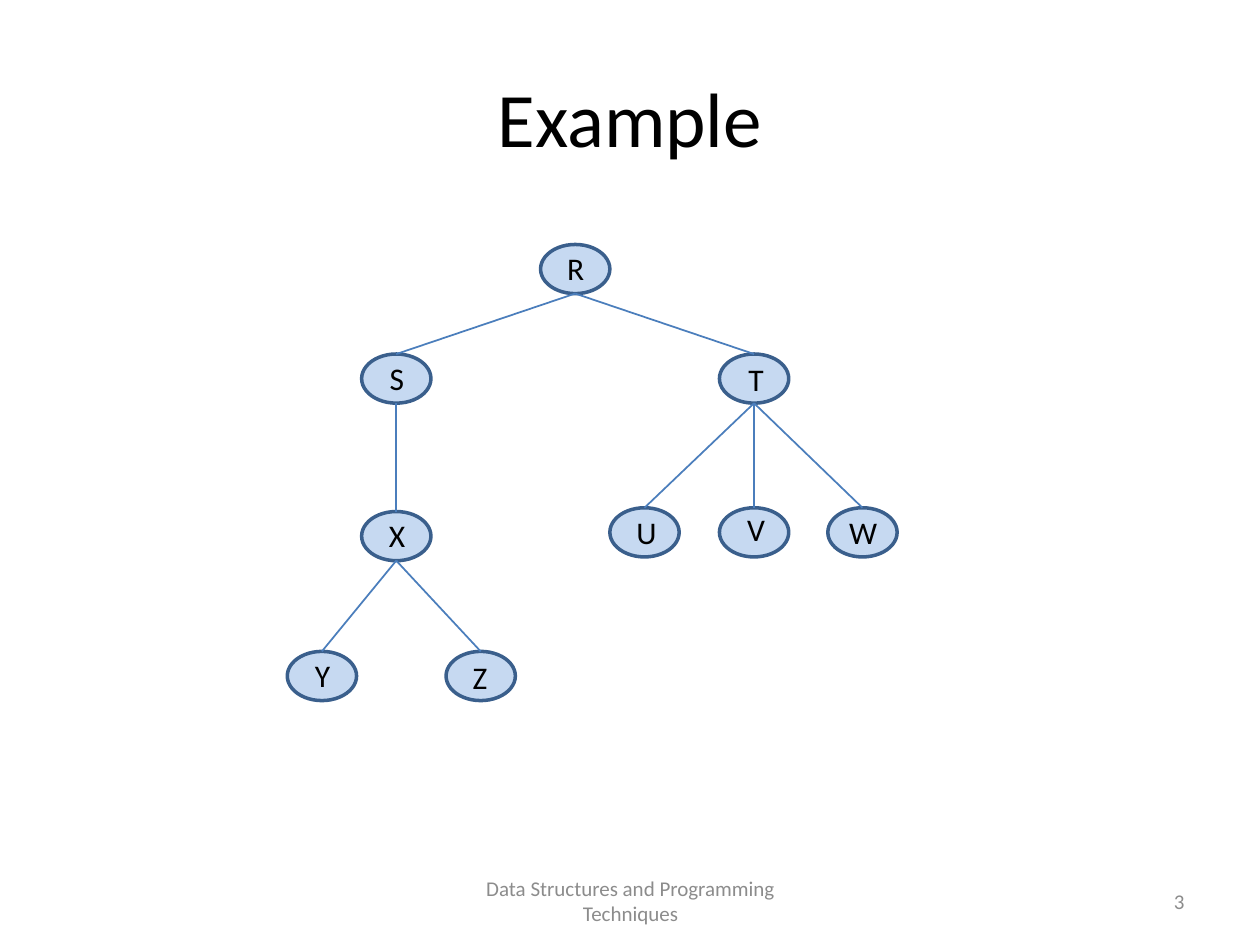
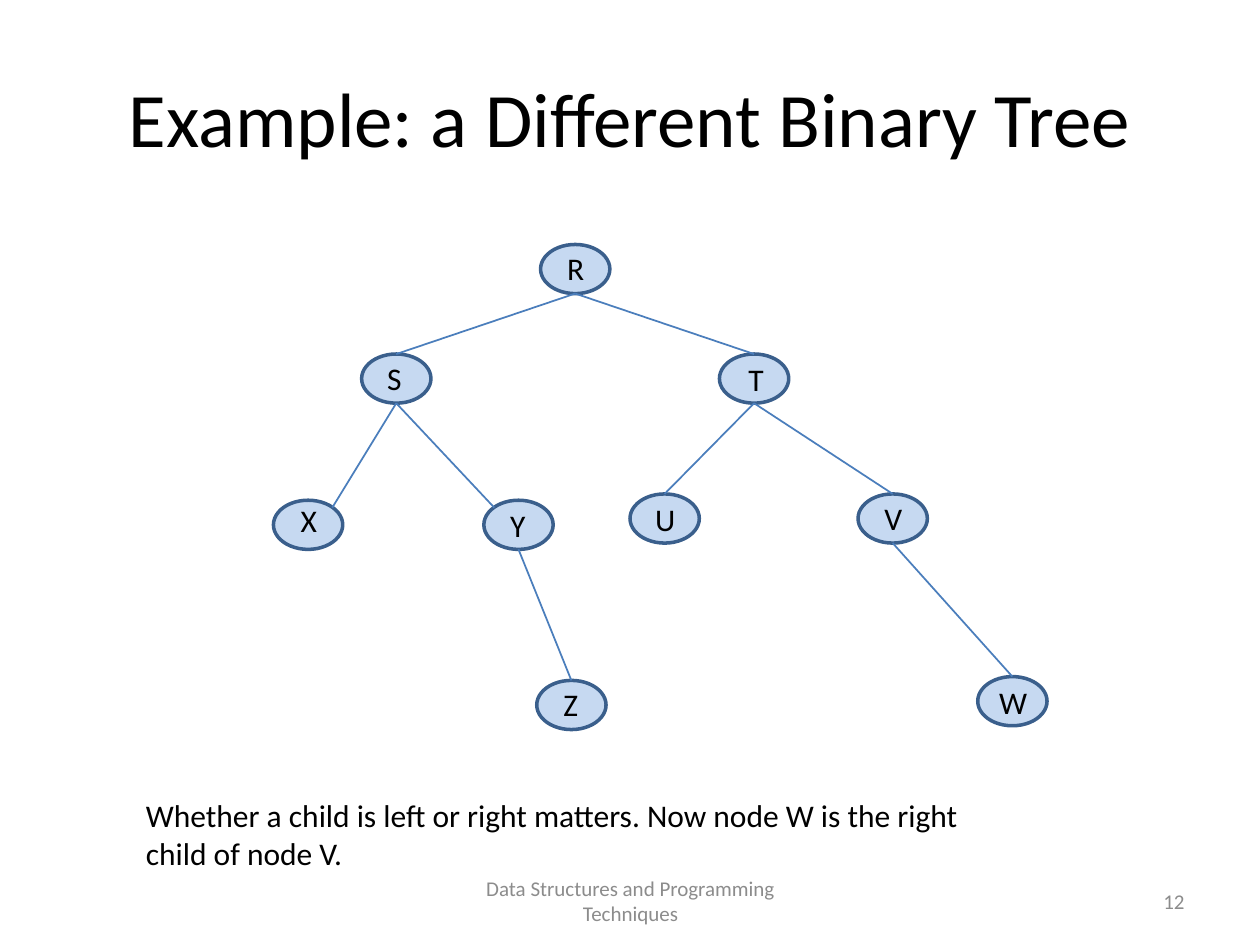
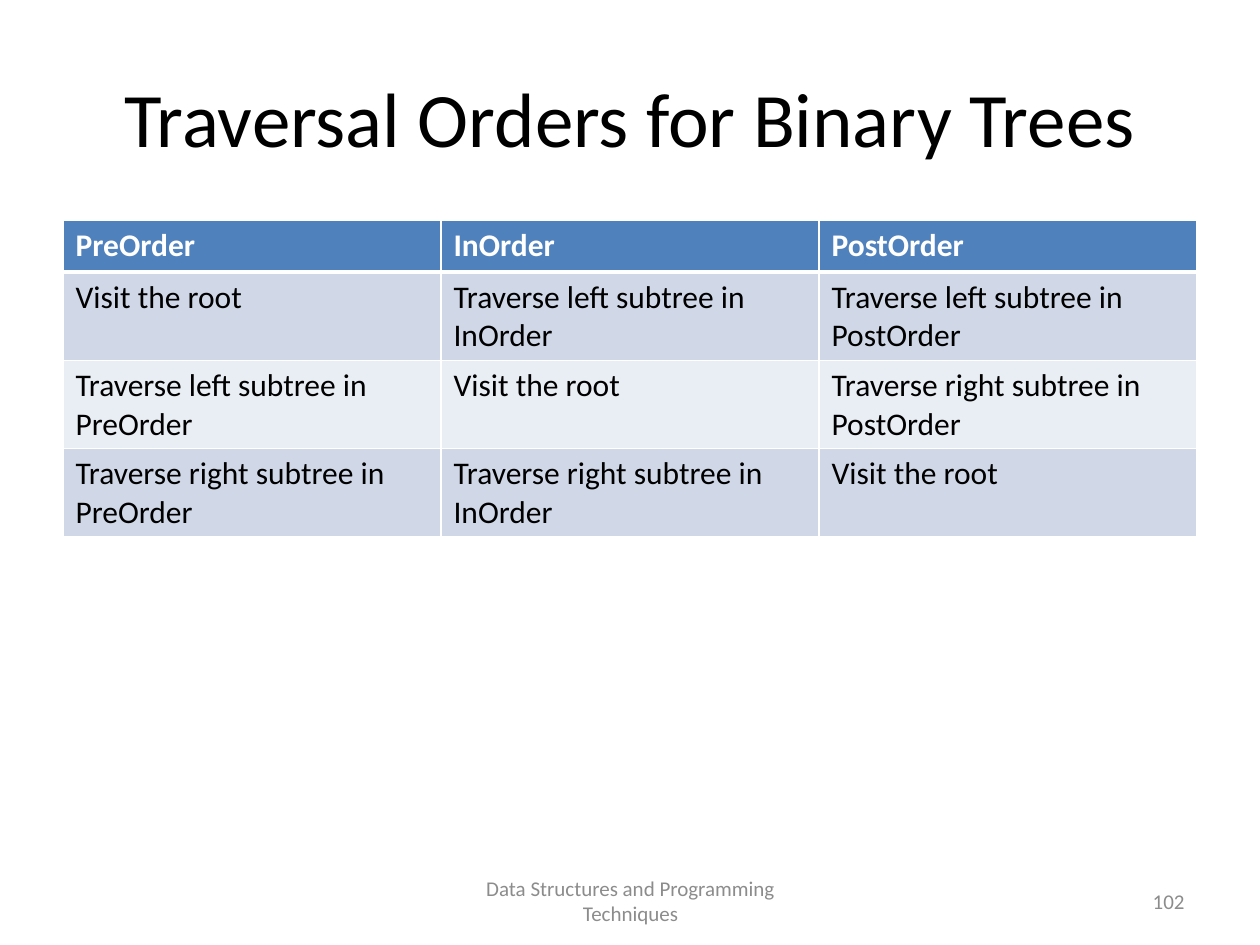
from lxml import etree
from pptx import Presentation
from pptx.dml.color import RGBColor
from pptx.enum import shapes, text
from pptx.oxml.ns import qn
from pptx.util import Inches, Pt

COLORS = {
    "ink": "000000",
    "muted": "8C8C8C",
    "node": "C6D9F1",
    "outline": "3A5F8C",
    "edge": "4B7EBC",
    "header": "4F81BD",
    "band": "D0D8E8",
    "light": "E9EDF4",
    "white": "FFFFFF",
}
FONT = "Calibri"
FOOTER = "Data Structures and Programming Techniques"
NODE_W, NODE_H = 0.55, 0.39
CONTACT = {"top": (0.5, 0), "top left": (0.15, 0.15), "top right": (0.85, 0.15)}
LEFT, CENTER, RIGHT = text.PP_ALIGN.LEFT, text.PP_ALIGN.CENTER, text.PP_ALIGN.RIGHT
TOP, MIDDLE = text.MSO_ANCHOR.TOP, text.MSO_ANCHOR.MIDDLE


def write(frame, words, size, color="ink", align=LEFT, anchor=TOP, bold=False):
    frame.word_wrap = True
    frame.vertical_anchor = anchor
    paragraph = frame.paragraphs[0]
    paragraph.alignment = align
    run = paragraph.add_run()
    run.text = words
    run.font.name = FONT
    run.font.size = Pt(size)
    run.font.bold = bold
    run.font.color.rgb = RGBColor.from_string(COLORS[color])


def add_words(slide, box, words, size, **style):
    area = slide.shapes.add_textbox(*map(Inches, box))
    write(area.text_frame, words, size, **style)


prs = Presentation()
prs.slide_width, prs.slide_height = Inches(10), Inches(7.5)

pages = []
for heading, number in [
    ("Example", "3"),
    ("Example: a Different Binary Tree", "12"),
    ("Traversal Orders for Binary Trees", "102"),
]:
    page = prs.slides.add_slide(prs.slide_layouts[5])
    title = page.shapes.title
    title.left, title.top, title.width, title.height = map(Inches, (0.5, 0.3, 9, 1.25))
    write(title.text_frame, heading, 44, align=CENTER, anchor=MIDDLE)
    add_words(page, (3.42, 6.95, 3.17, 0.4), FOOTER, 12,
              color="muted", align=CENTER, anchor=MIDDLE)
    add_words(page, (7.17, 6.95, 2.33, 0.4), number, 12,
              color="muted", align=RIGHT, anchor=MIDDLE)
    pages.append(page)
general_page, binary_page, traversal_page = pages

# node: left, top, label left, label top
general_nodes = {
    "R": (4.29, 1.94, 4.36, 1.93),
    "S": (2.87, 2.81, 2.94, 2.8),
    "T": (5.71, 2.81, 5.79, 2.81),
    "U": (4.84, 4.03, 4.92, 4.02),
    "V": (5.71, 4.03, 5.79, 4),
    "W": (6.57, 4.03, 6.64, 4.02),
    "X": (2.87, 4.06, 2.94, 4.05),
    "Y": (2.28, 5.17, 2.35, 5.16),
    "Z": (3.54, 5.17, 3.6, 5.17),
}
general_edges = [(*pair, "top") for pair in ("RS", "RT", "SX", "TU", "TV", "TW", "XY", "XZ")]

binary_nodes = {
    "R": (4.29, 1.94, 4.36, 1.93),
    "S": (2.87, 2.81, 2.92, 2.8),
    "T": (5.71, 2.81, 5.79, 2.81),
    "U": (5, 3.92, 5.07, 3.92),
    "V": (6.81, 3.92, 6.88, 3.91),
    "W": (7.76, 5.37, 7.83, 5.37),
    "X": (2.17, 3.97, 2.24, 3.93),
    "Y": (3.84, 3.97, 3.9, 3.97),
    "Z": (4.26, 5.4, 4.32, 5.39),
}
binary_edges = [(*pair, "top") for pair in ("RS", "RT", "TU", "TV", "VW", "YZ")]
binary_edges += [("S", "X", "top right"), ("S", "Y", "top left")]

for page, nodes, edges in [
    (general_page, general_nodes, general_edges),
    (binary_page, binary_nodes, binary_edges),
]:
    for left, top, _, _ in nodes.values():
        node = page.shapes.add_shape(
            shapes.MSO_SHAPE.OVAL, *map(Inches, (left, top, NODE_W, NODE_H)))
        node.shadow.inherit = False
        node.fill.solid()
        node.fill.fore_color.rgb = RGBColor.from_string(COLORS["node"])
        node.line.color.rgb = RGBColor.from_string(COLORS["outline"])
        node.line.width = Pt(2)
    for parent, child, side in edges:
        parent_left, parent_top = nodes[parent][:2]
        child_left, child_top = nodes[child][:2]
        across, down = CONTACT[side]
        edge = page.shapes.add_connector(
            shapes.MSO_CONNECTOR.STRAIGHT,
            Inches(parent_left + NODE_W / 2), Inches(parent_top + NODE_H),
            Inches(child_left + across * NODE_W), Inches(child_top + down * NODE_H))
        edge.line.color.rgb = RGBColor.from_string(COLORS["edge"])
        edge.line.width = Pt(1)
        etree.SubElement(edge._element.spPr, qn("a:effectLst"))
    for letter, (_, _, label_left, label_top) in nodes.items():
        add_words(page, (label_left, label_top, 0.42, 0.4), letter, 18, align=CENTER)

add_words(binary_page, (1.06, 6.27, 6.83, 0.71),
          "Whether a child is left or right matters. "
          "Now node W is the right child of node V.", 18)

root, left_step, right_step = "Visit the root", "Traverse left subtree in ", "Traverse right subtree in "
orders = {
    "PreOrder": (root, left_step, right_step),
    "InOrder": (left_step, root, right_step),
    "PostOrder": (left_step, right_step, root),
}
traversals = traversal_page.shapes.add_table(
    4, 3, *map(Inches, (0.5, 1.75, 9, 2.51))).table
for index, row in enumerate(traversals.rows):
    row.height = Inches(0.7 if index else 0.41)
for column, (order, steps) in enumerate(orders.items()):
    traversals.columns[column].width = Inches(3)
    entries = [order] + [step if step == root else step + order for step in steps]
    for row, entry in enumerate(entries):
        cell = traversals.cell(row, column)
        for side in "LRTB":
            thick = (row, side) in [(0, "B"), (1, "T")]
            border = etree.SubElement(cell._tc.get_or_add_tcPr(), qn(f"a:ln{side}"),
                                      w=str(Pt(3 if thick else 1)))
            paint = etree.SubElement(border, qn("a:solidFill"))
            etree.SubElement(paint, qn("a:srgbClr"), val=COLORS["white"])
        cell.fill.solid()
        shade = "header" if row == 0 else "band" if row % 2 else "light"
        cell.fill.fore_color.rgb = RGBColor.from_string(COLORS[shade])
        write(cell.text_frame, entry, 18, color="ink" if row else "white", bold=row == 0)

prs.save("out.pptx")
